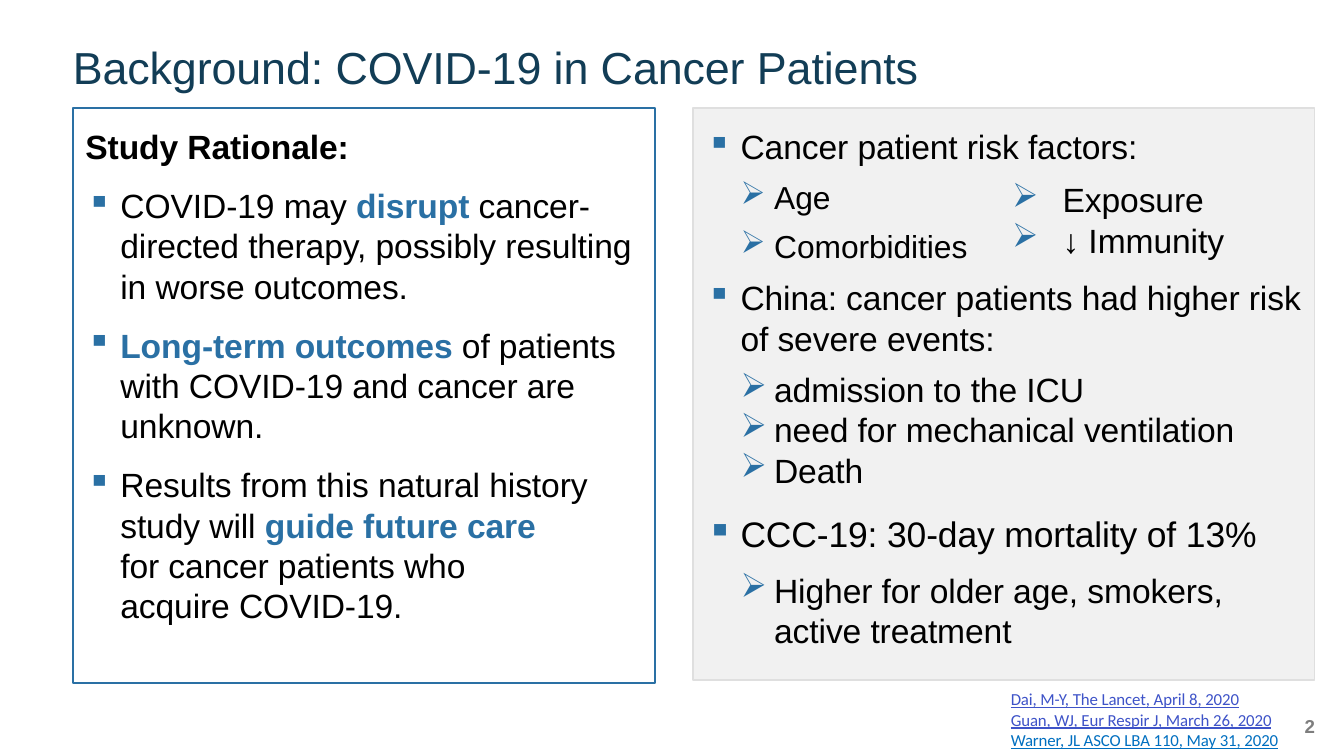
from lxml.etree import SubElement
from pptx import Presentation
from pptx.dml.color import RGBColor
from pptx.enum.shapes import MSO_SHAPE as Shape
from pptx.oxml.ns import qn
from pptx.util import Emu, Pt

PX = 9525  # EMU in one px, 96 px to the inch
ACCENT, BLACK, GREY = "2A70A4", "000000", "7E7E7E"
SQUARE, ARROW = "▪", "➢"
BODY = {"name": "Arial", "size": 18, "color": BLACK, "bold": False}


def px(value):
    return Emu(value * PX)


def color(value):
    return RGBColor.from_string(value)


def add_panel(page, bounds, fill=None, line=ACCENT):
    panel = page.shapes.add_shape(Shape.RECTANGLE, *map(px, bounds))
    panel.shadow.inherit = False
    if fill:
        panel.fill.solid()
        panel.fill.fore_color.rgb = color(fill)
    else:
        panel.fill.background()
    panel.line.color.rgb = color(line)
    panel.line.width = Pt(0.96)


def add_bullet(para, char, left, hanging):
    props = para._p.get_or_add_pPr()
    props.set("marL", str(px(left)))
    props.set("indent", str(-px(hanging)))
    SubElement(SubElement(props, qn("a:buClr")), qn("a:srgbClr"), val=ACCENT)
    SubElement(props, qn("a:buChar"), char=char)


def add_span(para, text, style):
    span = para.add_run()
    span.text = text
    span._r.get_or_add_rPr().set("spc", "-5")
    for key, value in style.items():
        if key == "color":
            span.font.color.rgb = color(value)
        else:
            setattr(span.font, key, Pt(value) if key == "size" else value)


def add_lines(para, text, style):
    """Words between asterisks are emphasised; a newline breaks the line."""
    strong = {**style, "color": ACCENT, "bold": True}
    for index, part in enumerate(text.split("*")):
        for row, piece in enumerate(part.split("\n")):
            if row:
                para.add_line_break()
            if piece:
                add_span(para, piece, strong if index % 2 else style)


def add_text(page, bounds, items, top=2, pitch=1.2, **base):
    """Each item is a dict: text, before, bullet (char, left, hanging), style."""
    frame = page.shapes.add_textbox(*map(px, bounds)).text_frame
    frame.word_wrap = True
    frame.margin_left = frame.margin_right = frame.margin_bottom = 0
    frame.margin_top = px(top)
    for index, item in enumerate(items):
        para = frame.add_paragraph() if index else frame.paragraphs[0]
        style = {**BODY, **base, **item.get("style", {})}
        para.line_spacing = Pt(round(style["size"] * pitch, 2))
        para.space_before = Pt(item.get("before", 0))
        if "bullet" in item:
            add_bullet(para, *item["bullet"])
        add_lines(para, item["text"], style)


def point(text, before=0, **style):
    return {"text": text, "before": before, "bullet": (SQUARE, 25, 24), "style": style}


def subpoint(text, before=0, left=25, hanging=24):
    return {"text": text, "before": before, "bullet": (ARROW, left, hanging)}


def add_rationale(page):
    add_panel(page, (52, 77, 416, 411))
    add_text(page, (61, 75, 394, 372), [
        {"text": "Study Rationale:", "style": {"bold": True}},
        point("COVID-19 may *disrupt* cancer-\ndirected therapy, possibly resulting\n"
              "in worse outcomes.", 10),
        point("*Long-term outcomes* of patients\nwith COVID-19 and cancer are\nunknown.", 10),
        point("Results from this natural history\nstudy will *guide future care*\n"
              "for cancer patients who\nacquire COVID-19.", 10),
    ], top=15)


def add_risks(page):
    add_panel(page, (495, 77, 444, 409), fill="F1F1F1", line="DFDFDF")
    add_text(page, (504, 88, 330, 32), [point("Cancer patient risk factors:")])

    # Risk factors in two columns
    add_text(page, (528, 117, 172, 73), [
        subpoint("Age"),
        subpoint("Comorbidities", 6),
    ], top=10, size=17)
    add_text(page, (722, 126, 160, 60), [
        subpoint("Exposure", left=37, hanging=36),
        subpoint("↓ Immunity", left=37, hanging=36),
    ])

    # Findings
    add_text(page, (504, 196, 432, 270), [
        point("China: cancer patients had higher risk\nof severe events:"),
        subpoint("admission to the ICU", 6, left=49),
        subpoint("need for mechanical ventilation", left=49),
        subpoint("Death", left=49),
        point("CCC-19: 30-day mortality of 13%", 12, size=19),
        subpoint("Higher for older age, smokers,\nactive treatment", 8, left=49),
    ])


def add_footer(page):
    late = {"color": "006FC0"}
    add_text(page, (722, 491, 200, 46), [
        {"text": "Dai, M-Y, The Lancet, April 8, 2020"},
        {"text": "Guan, WJ, Eur Respir J, March 26, 2020"},
        {"text": "Warner, JL ASCO LBA 110, May 31, 2020", "style": late},
    ], top=1, pitch=1.22, name="Calibri", size=9, color="3E53C8", underline=True)
    add_text(page, (932, 509, 12, 18), [{"text": "2"}], size=10, color=GREY, bold=True)


def main():
    deck = Presentation()
    deck.slide_width, deck.slide_height = px(960), px(540)
    page = deck.slides.add_slide(deck.slide_layouts[6])
    add_text(page, (52, 26, 620, 41), [{"text": "Background: COVID-19 in Cancer Patients"}],
             size=24, color="123D56")
    add_rationale(page)
    add_risks(page)
    add_footer(page)
    deck.save("out.pptx")


if __name__ == "__main__":
    main()
